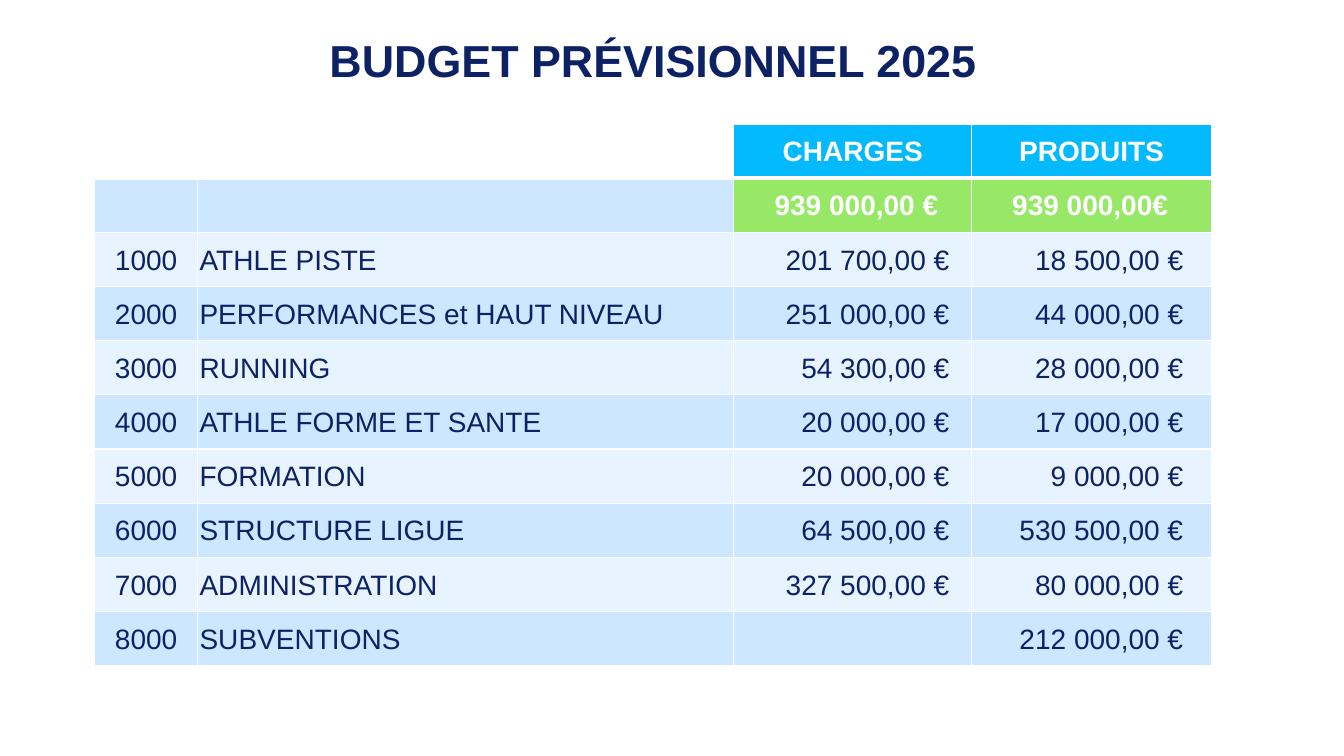
from dataclasses import dataclass

from lxml import etree
from pptx import Presentation
from pptx.dml.color import RGBColor
from pptx.enum.text import MSO_ANCHOR, PP_ALIGN
from pptx.oxml.ns import qn
from pptx.util import Inches, Pt

LEFT, CENTER, RIGHT = PP_ALIGN.LEFT, PP_ALIGN.CENTER, PP_ALIGN.RIGHT
MIDDLE = MSO_ANCHOR.MIDDLE
TITLE_ONLY = 5
GRID = 100


@dataclass(frozen=True)
class Theme:
    font: str = "Arial"
    title_size: int = 32
    table_size: int = 20
    white: str = "FEFFFE"
    navy: str = "0D2165"
    blue: str = "04BAFF"
    green: str = "98E868"
    bands: tuple = ("CCE7FF", "E7F3FF")


HEADINGS = ("", "", "CHARGES", "PRODUITS")
TOTALS = ("", "", "939 000,00 €", "939 000,00€")
BUDGET_LINES = (
    ("1000", "ATHLE PISTE", "201 700,00 €", "18 500,00 €"),
    ("2000", "PERFORMANCES et HAUT NIVEAU", "251 000,00 €", "44 000,00 €"),
    ("3000", "RUNNING", "54 300,00 €", "28 000,00 €"),
    ("4000", "ATHLE FORME ET SANTE", "20 000,00 €", "17 000,00 €"),
    ("5000", "FORMATION", "20 000,00 €", "9 000,00 €"),
    ("6000", "STRUCTURE LIGUE", "64 500,00 €", "530 500,00 €"),
    ("7000", "ADMINISTRATION", "327 500,00 €", "80 000,00 €"),
    ("8000", "SUBVENTIONS", "", "212 000,00 €"),
)
COLUMN_WIDTHS = (7.65, 39.9, 17.7, 17.85)
ROW_HEIGHT = 7.17
ALIGNMENTS = (CENTER, LEFT, RIGHT, RIGHT)
CELL_MARGIN = 0.02
AMOUNT_MARGINS = {2: 0.22, 3: 0.28}
TOTAL_MARGINS = {2: 0.33, 3: 0.43}


def write_text(frame, text, *, font, size, color, bold=False, align=LEFT):
    paragraph = frame.paragraphs[0]
    paragraph.alignment = align
    run = paragraph.add_run()
    run.text = text
    run.font.name = font
    run.font.size = Pt(size)
    run.font.bold = bold
    run.font.color.rgb = RGBColor.from_string(color)


def set_borders(cell, color, widths):
    properties = cell._tc.get_or_add_tcPr()
    for side, width in widths.items():
        line = etree.SubElement(properties, qn(f"a:ln{side}"), w=str(Pt(width)))
        fill = etree.SubElement(line, qn("a:solidFill"))
        etree.SubElement(fill, qn("a:srgbClr"), val=color)


class BudgetSlide:
    def __init__(self, presentation, theme):
        self.theme = theme
        self.column = presentation.slide_width / GRID
        self.row = presentation.slide_height / GRID
        self.slide = presentation.slides.add_slide(presentation.slide_layouts[TITLE_ONLY])
        background = self.slide.background.fill
        background.solid()
        background.fore_color.rgb = RGBColor.from_string(theme.white)

    def place(self, left, top, width, height):
        return (round(left * self.column), round(top * self.row),
                round(width * self.column), round(height * self.row))

    def title(self, text, *box):
        shape = self.slide.shapes.title
        shape.left, shape.top, shape.width, shape.height = self.place(*box)
        shape.text_frame.vertical_anchor = MIDDLE
        write_text(shape.text_frame, text, font=self.theme.font,
                   size=self.theme.title_size, color=self.theme.navy,
                   bold=True, align=CENTER)

    def table(self, rows, left, top):
        box = self.place(left, top, sum(COLUMN_WIDTHS), ROW_HEIGHT * len(rows))
        table = self.slide.shapes.add_table(len(rows), len(COLUMN_WIDTHS), *box).table
        table.first_row = table.horz_banding = False
        for column, width in zip(table.columns, COLUMN_WIDTHS):
            column.width = round(width * self.column)
        for row_index, values in enumerate(rows):
            table.rows[row_index].height = round(ROW_HEIGHT * self.row)
            for column_index, text in enumerate(values):
                self.cell(table.cell(row_index, column_index), text, row_index, column_index)

    def cell(self, cell, text, row, column):
        theme = self.theme
        heading, total = row == 0, row == 1
        fill = theme.bands[(row + 1) % 2]
        if heading:
            fill = theme.blue if text else theme.white
        elif total and text:
            fill = theme.green
        set_borders(cell, theme.white,
                    {"L": 1, "R": 1, "T": 3 if total else 1, "B": 3 if heading else 1})
        cell.fill.solid()
        cell.fill.fore_color.rgb = RGBColor.from_string(fill)
        cell.vertical_anchor = MIDDLE
        right_margins = {} if heading else TOTAL_MARGINS if total else AMOUNT_MARGINS
        cell.margin_left = cell.margin_top = Inches(CELL_MARGIN)
        cell.margin_right = Inches(right_margins.get(column, CELL_MARGIN))
        cell.margin_bottom = 0
        if text:
            write_text(cell.text_frame, text, font=theme.font, size=theme.table_size,
                       color=theme.white if heading or total else theme.navy,
                       bold=heading or total,
                       align=CENTER if heading else ALIGNMENTS[column])


def main():
    presentation = Presentation()
    presentation.slide_width = Inches(13.33)
    presentation.slide_height = Inches(7.5)
    slide = BudgetSlide(presentation, Theme())
    slide.table((HEADINGS, TOTALS, *BUDGET_LINES), 7.05, 16.4)
    slide.title("BUDGET PRÉVISIONNEL 2025", 17, 3.6, 63.2, 8.53)
    presentation.save("out.pptx")


if __name__ == "__main__":
    main()
